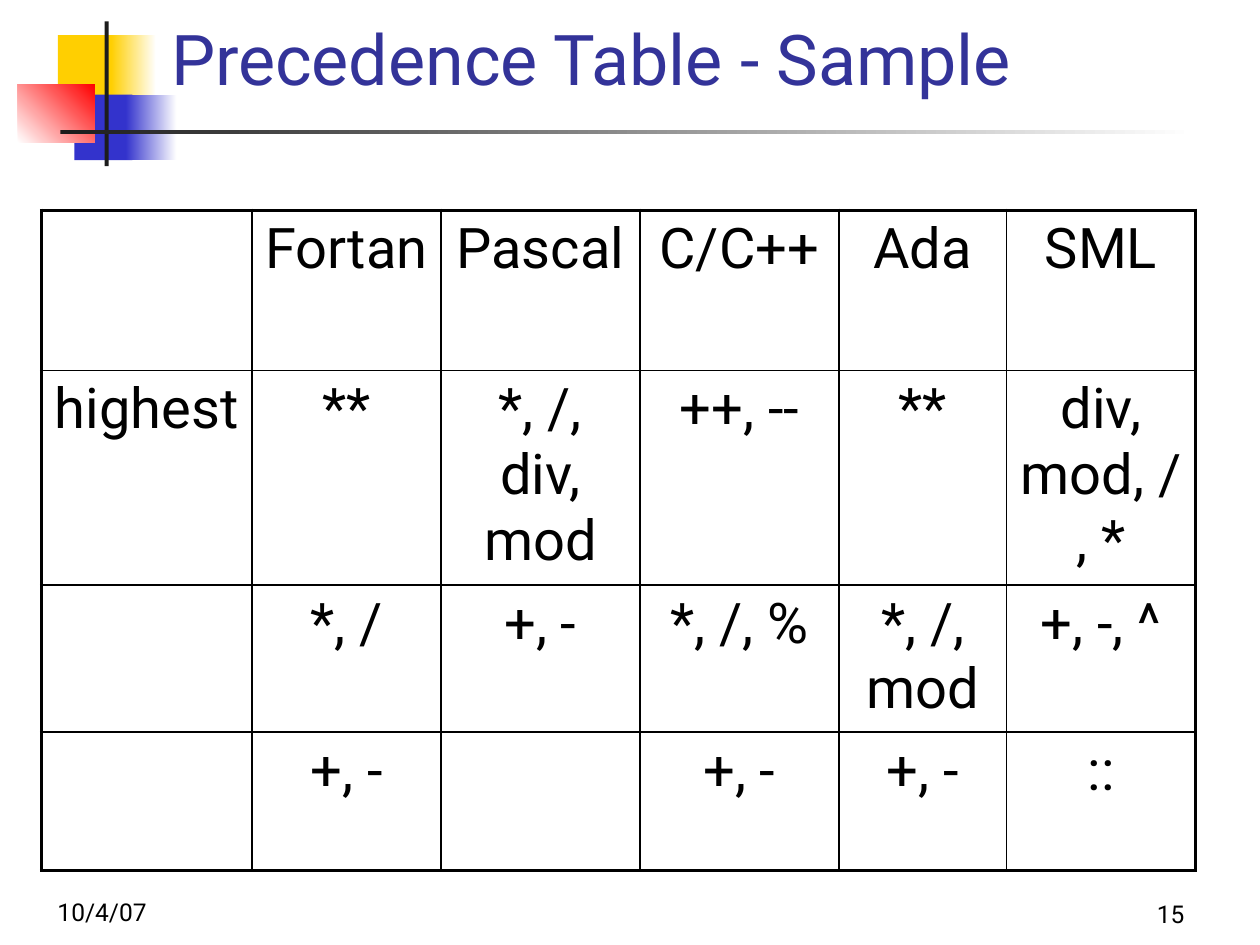
from dataclasses import dataclass

from lxml.etree import SubElement
from pptx import Presentation
from pptx.dml.color import RGBColor
from pptx.enum.shapes import MSO_SHAPE
from pptx.enum.text import MSO_ANCHOR, PP_ALIGN
from pptx.oxml.ns import qn
from pptx.slide import Slide
from pptx.table import _Cell
from pptx.text.text import _Paragraph
from pptx.util import Cm, Pt

FONT = "Roboto"
BLACK, WHITE, DARK = "000000", "FFFFFF", "1C1C1C"
GOLD, BLUE, RED, NAVY = "FFCF01", "3333CC", "FF0000", "333399"
THICK, THIN = 2.25, 1


@dataclass
class Block:
    """A filled rectangle in cm, fading to a second colour if one is given."""
    left: float
    top: float
    width: float
    height: float
    fill: str
    fade: str = ""
    angle: float = 0


@dataclass
class Label:
    """A one-line text box in cm."""
    left: float
    top: float
    width: float
    height: float
    text: str
    size: float
    color: str = BLACK
    align: PP_ALIGN = PP_ALIGN.LEFT


BLOCKS = [
    Block(1.17, 0.71, 1.22, 1.32, GOLD),
    Block(2.24, 0.71, 0.91, 1.32, GOLD, WHITE),
    Block(1.5, 1.91, 1.17, 1.32, BLUE),
    Block(2.54, 1.91, 1.02, 1.32, BLUE, WHITE),
    Block(0.36, 1.7, 1.55, 1.17, WHITE, RED, 45),
    Block(2.11, 0.43, 0.08, 2.92, DARK),
    Block(1.22, 2.62, 22.86, 0.08, DARK, WHITE),
]
LABELS = [
    Label(0.91, 17.53, 5.28, 1.27, "10/4/07", 14),
    Label(18.85, 17.58, 5.28, 1.27, "15", 14, align=PP_ALIGN.RIGHT),
    Label(3.2, 0.46, 21.64, 1.68, "Precedence Table - Sample", 40, NAVY),
]
COLS = [4.24, 3.81, 4.01, 4.01, 3.38, 3.81]
ROWS = [3.23, 4.32, 2.97, 2.79]
CELLS = [
    ["", "Fortan", "Pascal", "C/C++", "Ada", "SML"],
    ["highest", "**", "*, /, div, mod", "++, --", "**", "div, mod, /, *"],
    ["", "*, /", "+, -", "*, /, %", "*, /, mod", "+, -, ^"],
    ["", "+, -", "", "+, -", "+, -", "::"],
]


def tint(code: str) -> RGBColor:
    """Turn a hex string into a colour."""
    return RGBColor.from_string(code)


def write(para: _Paragraph, text: str, size: float, color: str, align: PP_ALIGN) -> None:
    """Add one styled run to a paragraph."""
    para.alignment = align
    run = para.add_run()
    run.text = text
    run.font.name = FONT
    run.font.size = Pt(size)
    run.font.color.rgb = tint(color)


def draw_block(slide: Slide, block: Block) -> None:
    """Draw a rectangle with a plain or fading fill."""
    shape = slide.shapes.add_shape(
        MSO_SHAPE.RECTANGLE, Cm(block.left), Cm(block.top), Cm(block.width), Cm(block.height))
    shape.shadow.inherit = False
    shape.line.fill.background()
    if block.fade:
        shape.fill.gradient()
        shape.fill.gradient_angle = block.angle
        for stop, code in zip(shape.fill.gradient_stops, (block.fill, block.fade)):
            stop.color.rgb = tint(code)
    else:
        shape.fill.solid()
        shape.fill.fore_color.rgb = tint(block.fill)


def draw_label(slide: Slide, label: Label) -> None:
    """Draw a text box anchored at its bottom."""
    box = slide.shapes.add_textbox(
        Cm(label.left), Cm(label.top), Cm(label.width), Cm(label.height))
    frame = box.text_frame
    frame.word_wrap = True
    frame.vertical_anchor = MSO_ANCHOR.BOTTOM
    write(frame.paragraphs[0], label.text, label.size, label.color, label.align)


def edge(cell: _Cell, side: str, width: float) -> None:
    """Give one side of a cell a black border."""
    line = SubElement(cell._tc.get_or_add_tcPr(), qn(f"a:ln{side}"), w=str(Pt(width)))
    SubElement(SubElement(line, qn("a:solidFill")), qn("a:srgbClr"), val=BLACK)


def draw_table(slide: Slide) -> None:
    """Draw the operator table with a thick outer frame."""
    table = slide.shapes.add_table(
        len(ROWS), len(COLS), Cm(0.84), Cm(4.24), Cm(sum(COLS)), Cm(sum(ROWS))).table
    table.first_row = table.horz_banding = False
    for col, width in zip(table.columns, COLS):
        col.width = Cm(width)
    for row, height in zip(table.rows, ROWS):
        row.height = Cm(height)
    for i, line in enumerate(CELLS):
        for j, text in enumerate(line):
            cell = table.cell(i, j)
            outer = {"L": j == 0, "R": j == len(COLS) - 1,
                     "T": i == 0, "B": i == len(ROWS) - 1}
            for side, thick in outer.items():
                edge(cell, side, THICK if thick else THIN)
            cell.fill.background()
            if text:
                write(cell.text_frame.paragraphs[0], text, 32, BLACK, PP_ALIGN.CENTER)


def main() -> None:
    """Build the slide and save it."""
    deck = Presentation()
    deck.slide_width, deck.slide_height = Cm(25.4), Cm(19.05)
    slide = deck.slides.add_slide(deck.slide_layouts[6])
    for block in BLOCKS:
        draw_block(slide, block)
    for label in LABELS:
        draw_label(slide, label)
    draw_table(slide)
    deck.save("out.pptx")


if __name__ == "__main__":
    main()
